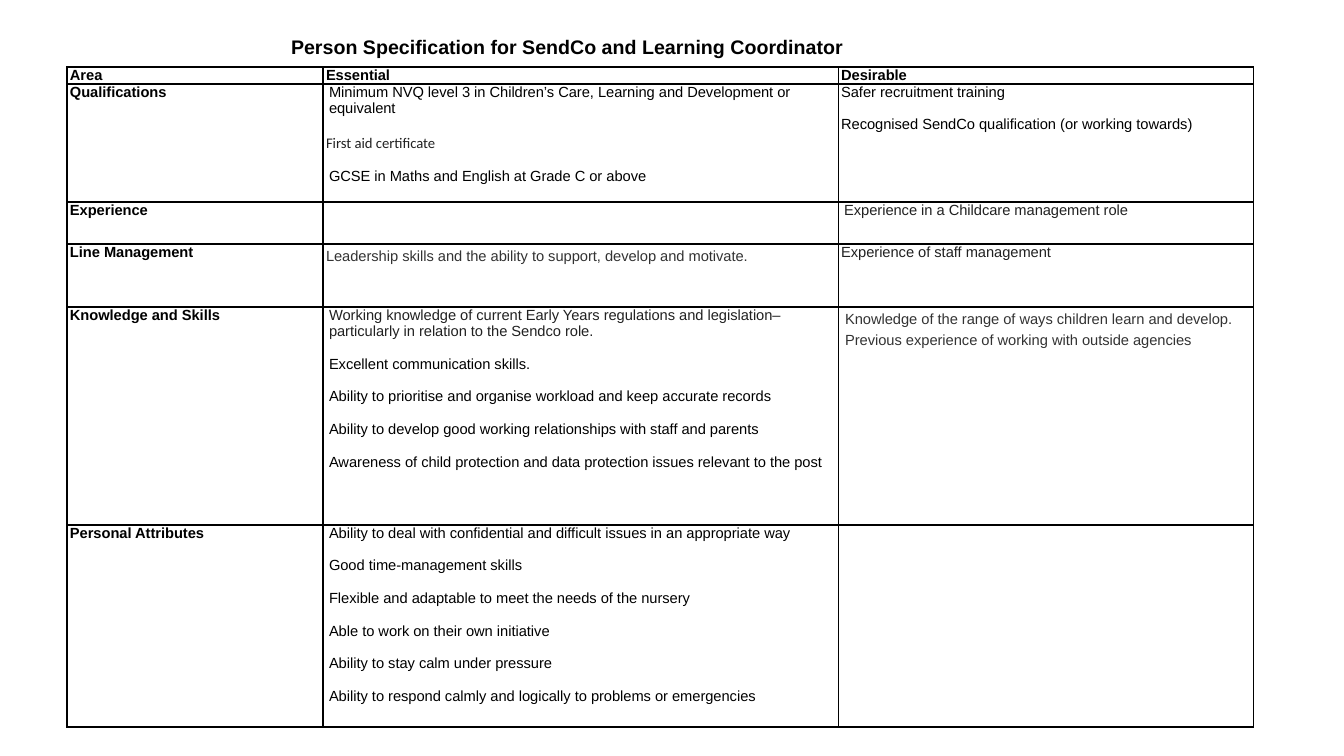
import pptx
import pptx.dml.color
import pptx.enum.text
import pptx.oxml
import pptx.oxml.ns
import pptx.util

BLACK = pptx.dml.color.RGBColor(0x00, 0x00, 0x00)
CHARCOAL = pptx.dml.color.RGBColor(0x21, 0x21, 0x21)
GREY = pptx.dml.color.RGBColor(0x33, 0x33, 0x33)

# Content: each cell is a list of (text, style name)
TITLE = "Person Specification for SendCo and Learning Coordinator"
HEADINGS = ["Area", "Essential", "Desirable"]
ROWS = [
    ("Qualifications",
     [("Minimum NVQ level 3 in Children’s Care, Learning and Development or equivalent", "indented"),
      ("First aid certificate", "calibri"),
      ("GCSE in Maths and English at Grade C or above", "indented")],
     [("Safer recruitment training", "plain"),
      ("Recognised SendCo qualification (or working towards)", "plain")]),
    ("Experience",
     [],
     [("Experience in a Childcare management role", "indented charcoal")]),
    ("Line Management",
     [("Leadership skills and the ability to support, develop and motivate.", "spaced")],
     [("Experience of staff management", "charcoal")]),
    ("Knowledge and Skills",
     [("Working knowledge of current Early Years regulations and legislation– "
       "particularly in relation to the Sendco role.", "indented charcoal"),
      ("Excellent communication skills.", "indented"),
      ("Ability to prioritise and organise workload and keep accurate records", "indented"),
      ("Ability to develop good working relationships with staff and parents", "indented"),
      ("Awareness of child protection and data protection issues relevant to the post", "indented")],
     [("Knowledge of the range of ways children learn and develop.", "indented spaced"),
      ("Previous experience of working with outside agencies", "indented spaced")]),
    ("Personal Attributes",
     [("Ability to deal with confidential and difficult issues in an appropriate way", "indented"),
      ("Good time-management skills", "indented"),
      ("Flexible and adaptable to meet the needs of the nursery", "indented"),
      ("Able to work on their own initiative", "indented"),
      ("Ability to stay calm under pressure", "indented"),
      ("Ability to respond calmly and logically to problems or emergencies", "indented")],
     []),
]

# Style name: (font, colour, bold, left indent px, gap before pt, line pitch pt)
STYLES = {
    "heading": ("Arial", BLACK, True, 0, 0, None),
    "plain": ("Arial", BLACK, False, 0, 11.7, None),
    "indented": ("Arial", BLACK, False, 3, 11.7, None),
    "charcoal": ("Arial", CHARCOAL, False, 0, 11.7, None),
    "indented charcoal": ("Arial", CHARCOAL, False, 3, 11.7, None),
    "calibri": ("Calibri", CHARCOAL, False, 0, 12.8, None),
    "spaced": ("Arial", GREY, False, 0, 0, 15),
    "indented spaced": ("Arial", GREY, False, 4, 0, 15),
}

# Layout in px
TABLE_LEFT, TABLE_TOP = 67, 67
COLUMN_WIDTHS = [256, 515, 415]
ROW_HEIGHTS = [17, 118, 42, 63, 218, 202]
CELL_INSET = 3
TITLE_BOX = (281, 29, 575, 36)
BODY_SIZE = pptx.util.Pt(10.5)


def px(length):
    return pptx.util.Emu(round(length * 914400 / 100.8))


def set_font(paragraph, name, size, colour, bold):
    paragraph.font.name = name
    paragraph.font.size = size
    paragraph.font.color.rgb = colour
    paragraph.font.bold = bold


def fill_cell(cell, lines):
    cell.margin_left = cell.margin_right = px(CELL_INSET)
    cell.margin_top = cell.margin_bottom = 0
    frame = cell.text_frame
    frame.paragraphs[0].font.size = BODY_SIZE
    for index, (text, style) in enumerate(lines):
        name, colour, bold, indent, gap, pitch = STYLES[style]
        paragraph = frame.add_paragraph() if index else frame.paragraphs[0]
        paragraph.text = text
        if indent:
            paragraph._p.get_or_add_pPr().set("marL", str(px(indent)))
        if index and gap:
            paragraph.space_before = pptx.util.Pt(gap)
        if pitch:
            paragraph.line_spacing = pptx.util.Pt(pitch)
        set_font(paragraph, name, BODY_SIZE, colour, bold)


def draw_borders(cell):
    properties = cell._tc.get_or_add_tcPr()
    for side in ("lnL", "lnR", "lnT", "lnB"):
        properties.append(pptx.oxml.parse_xml(
            f'<a:{side} {pptx.oxml.ns.nsdecls("a")} w="12700"><a:solidFill>'
            f'<a:srgbClr val="{BLACK}"/></a:solidFill></a:{side}>'))


def main():
    presentation = pptx.Presentation()
    presentation.slide_width = pptx.util.Inches(13.33)
    presentation.slide_height = pptx.util.Inches(7.5)
    slide = presentation.slides.add_slide(presentation.slide_layouts[6])

    # Specification table
    grid = [[[(heading, "heading")] for heading in HEADINGS]]
    grid += [[[(area, "heading")], essential, desirable] for area, essential, desirable in ROWS]
    table = slide.shapes.add_table(
        len(grid), len(HEADINGS), px(TABLE_LEFT), px(TABLE_TOP),
        px(sum(COLUMN_WIDTHS)), px(sum(ROW_HEIGHTS))).table
    table.first_row = table.horz_banding = False
    for column, width in zip(table.columns, COLUMN_WIDTHS):
        column.width = px(width)
    for row, height, contents in zip(table.rows, ROW_HEIGHTS, grid):
        row.height = px(height)
        for cell, lines in zip(row.cells, contents):
            fill_cell(cell, lines)
            draw_borders(cell)
            cell.fill.background()

    # Title
    title = slide.shapes.add_textbox(*map(px, TITLE_BOX))
    title.text_frame.word_wrap = False
    title.text_frame.vertical_anchor = pptx.enum.text.MSO_ANCHOR.MIDDLE
    paragraph = title.text_frame.paragraphs[0]
    paragraph.text = TITLE
    set_font(paragraph, "Arial", pptx.util.Pt(14), BLACK, True)

    presentation.save("out.pptx")


if __name__ == "__main__":
    main()
